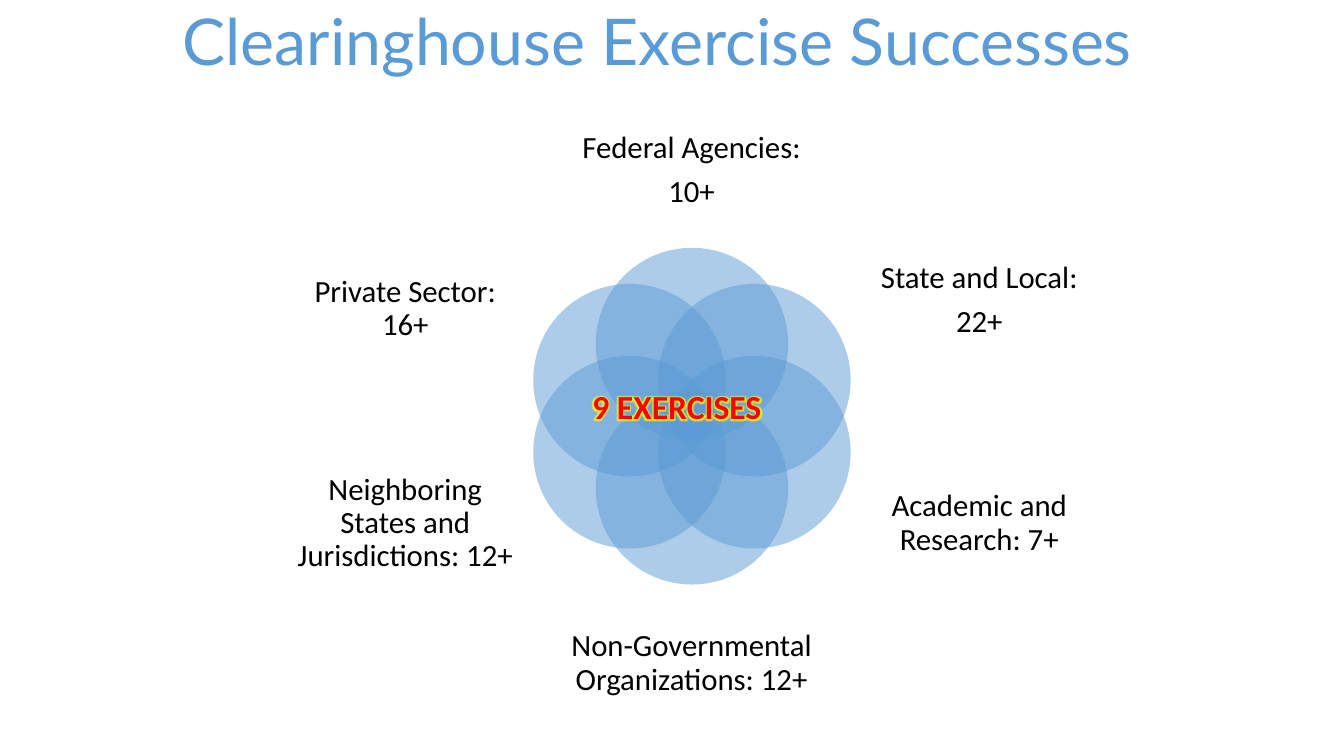
from math import cos, radians, sin
from lxml import etree
from pptx import Presentation
from pptx.dml import color
from pptx.enum import shapes, text
from pptx.oxml import ns
from pptx.util import Pt

BLUE, RED, GLOW = "5B9BD5", "FF0000", "FFFF00"
GROUPS = [
    (["Federal Agencies:", "10+"], (408, 75, 172, 94)),
    (["State and Local:", "22+"], (618, 164, 163, 102)),
    (["Academic and Research: 7+"], (618, 317, 163, 114)),
    (["Non-Governmental Organizations: 12+"], (408, 427, 172, 94)),
    (["Neighboring States and Jurisdictions: 12+"], (208, 317, 163, 114)),
    (["Private Sector: 16+"], (208, 164, 163, 114)),
]


def rgb(code):
    """Return the colour for a hex string."""
    return color.RGBColor.from_string(code)


def put(item, values):
    """Set each attribute named in a dict."""
    for name, value in values.items():
        setattr(item, name, value)


def style(par, size, hue, face="Calibri", bold=False):
    """Format the font of a paragraph's runs."""
    for run in par.runs:
        put(run.font, {"size": Pt(size), "name": face, "bold": bold})
        run.font.color.rgb = rgb(hue)


def child(node, tag, **attrs):
    """Add a DrawingML child element."""
    return etree.SubElement(node, ns.qn("a:" + tag), attrs)


def head(slide, box):
    """Place the title."""
    title = slide.shapes.title
    put(title, dict(zip(("left", "top", "width", "height"), map(Pt, box))))
    frame = title.text_frame
    frame.text = "Clearinghouse Exercise Successes"
    put(frame, {"auto_size": text.MSO_AUTO_SIZE.NONE, "word_wrap": True,
                "vertical_anchor": text.MSO_ANCHOR.BOTTOM})
    par = frame.paragraphs[0]
    par.alignment = text.PP_ALIGN.CENTER
    style(par, 46, BLUE, "Lato")


def petal(slide, box):
    """Draw one half-transparent circle."""
    disc = slide.shapes.add_shape(shapes.MSO_SHAPE.OVAL, *map(Pt, box))
    disc.shadow.inherit = False
    disc.fill.solid()
    disc.fill.fore_color.rgb = rgb(BLUE)
    disc.line.fill.background()
    hue = disc.fill._xPr.find(".//" + ns.qn("a:srgbClr"))
    child(hue, "alpha", val="50000")


def label(slide, box, lines):
    """Write one group's name and count."""
    frame = slide.shapes.add_textbox(*map(Pt, box)).text_frame
    put(frame, {"word_wrap": True, "vertical_anchor": text.MSO_ANCHOR.MIDDLE,
                "margin_left": 0, "margin_right": 0,
                "margin_top": 0, "margin_bottom": 0})
    frame.text = "\n".join(lines)
    for par in frame.paragraphs:
        put(par, {"alignment": text.PP_ALIGN.CENTER, "line_spacing": 0.9,
                  "space_after": Pt(7.7)})
        style(par, 22, "000000")


def flower(slide, box):
    """Ring the circles inside a box and label each group."""
    left, top, wide, high = box
    size = 137.5
    ring = (high - size) / 2
    for i, (lines, place) in enumerate(GROUPS):
        turn = radians(360 / len(GROUPS) * i)
        x = left + (wide - size) / 2 + ring * sin(turn)
        y = top + ring - ring * cos(turn)
        petal(slide, (x, y, size, size))
        label(slide, place, lines)


def core(slide, box):
    """Write the glowing total at the centre."""
    frame = slide.shapes.add_textbox(*map(Pt, box)).text_frame
    frame.word_wrap = True
    frame.text = "9 EXERCISES"
    par = frame.paragraphs[0]
    style(par, 24, RED, bold=True)
    props = par.runs[0].font._element
    effect = child(props, "effectLst")
    props.find(ns.qn("a:solidFill")).addnext(effect)
    glow = child(effect, "glow", rad=str(Pt(5)))
    child(child(glow, "srgbClr", val=GLOW), "alpha", val="80000")


def main():
    """Build and save the slide."""
    deck = Presentation()
    put(deck, {"slide_width": Pt(960), "slide_height": Pt(540)})
    slide = deck.slides.add_slide(deck.slide_layouts[5])
    head(slide, (0, -18.7, 939, 78.5))
    flower(slide, (380.5, 177, 227.5, 240.5))
    core(slide, (416, 272, 200, 36))
    deck.save("out.pptx")


if __name__ == "__main__":
    main()
